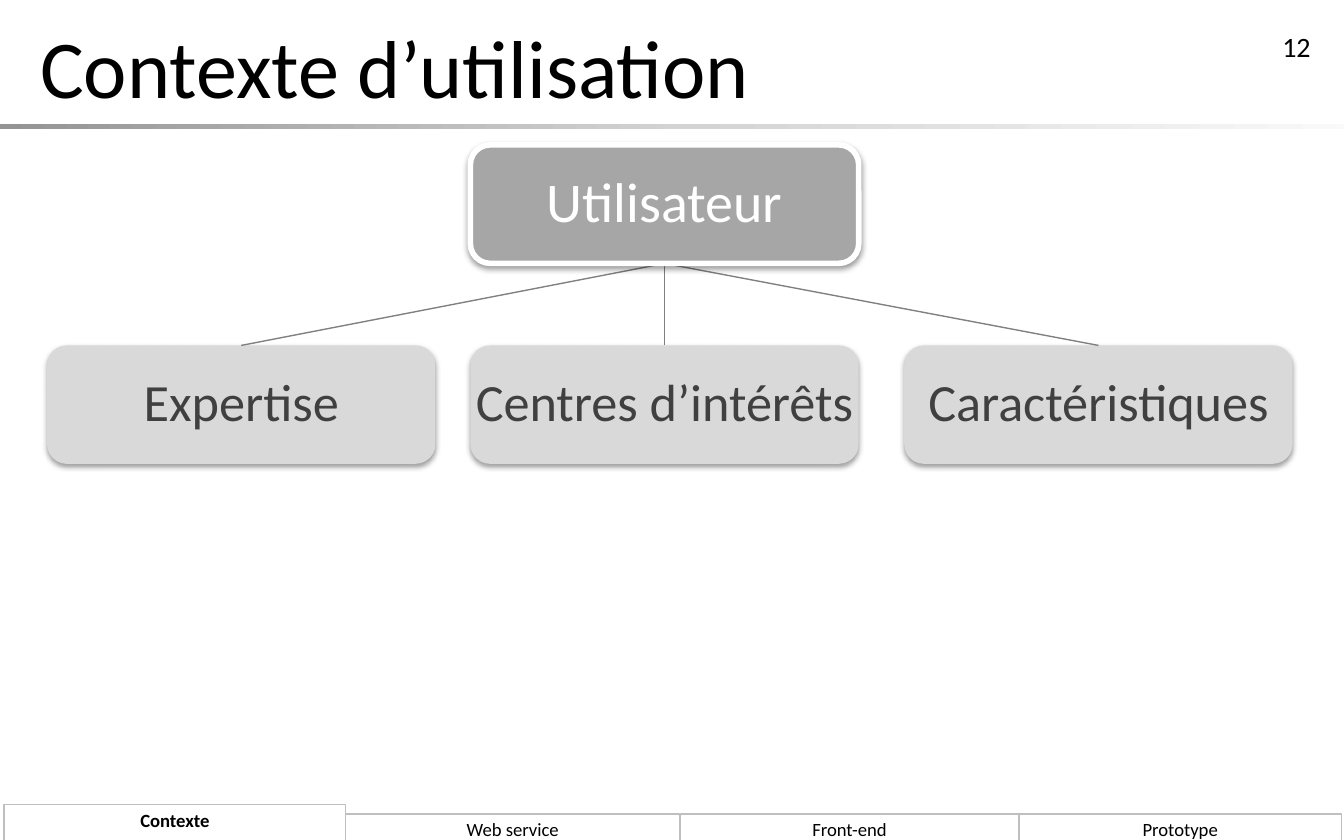
import lxml.etree
import pptx
import pptx.dml.color
import pptx.enum.shapes
import pptx.enum.text
import pptx.oxml.ns
import pptx.util

Cm = pptx.util.Cm
Pt = pptx.util.Pt
qn = pptx.oxml.ns.qn
SHAPES = pptx.enum.shapes.MSO_SHAPE
ALIGN = pptx.enum.text.PP_ALIGN
ANCHOR = pptx.enum.text.MSO_ANCHOR

TITLE = "Contexte d’utilisation"
PAGE_NUMBER = "12"
ROOT = "Utilisateur"
BRANCHES = [("Expertise", 0.89), ("Caractéristiques", 17.09), ("Centres d’intérêts", 8.89)]
TABS = ["Contexte", "Web service", "Front-end", "Prototype"]
TAB_EDGES = [0.08, 6.53, 12.85, 19.26, 25.35]
ACTIVE_TAB = "Contexte"
BAND_STOPS = [(0, "949494"), (50, "D3D3D3"), (100, "FAFAFA")]
COLORS = {
    "black": "000000",
    "white": "FFFFFF",
    "root": "A6A6A6",
    "branch": "D9D9D9",
    "branch_text": "404040",
    "link": "808080",
    "tab_line": "BFBFBF",
}
CARD_WIDTH, CARD_HEIGHT = 7.34, 2.24
ROOT_LEFT, ROOT_TOP, BRANCH_TOP = 8.89, 2.74, 6.53


def rgb(name):
    return pptx.dml.color.RGBColor.from_string(COLORS[name])


def write_text(shape, text, size, color="black", bold=False, align=ALIGN.LEFT,
               anchor=ANCHOR.TOP, margins=(0.25, 0.13, 0.25, 0.13), wrap=True, spacing=None):
    frame = shape.text_frame
    frame.word_wrap = wrap
    frame.vertical_anchor = anchor
    frame.margin_left, frame.margin_top, frame.margin_right, frame.margin_bottom = map(Cm, margins)
    paragraph = frame.paragraphs[0]
    paragraph.alignment = align
    paragraph.line_spacing = spacing
    run = paragraph.add_run()
    run.text = text
    run.font.name = "Calibri"
    run.font.size = Pt(size)
    run.font.bold = bold
    run.font.color.rgb = rgb(color)


def add_box(slide, kind, box, fill, line=None, line_width=0.75):
    shape = slide.shapes.add_shape(kind, *map(Cm, box))
    shape.shadow.inherit = False
    shape.fill.solid()
    shape.fill.fore_color.rgb = rgb(fill)
    if line:
        shape.line.color.rgb = rgb(line)
        shape.line.width = Pt(line_width)
    else:
        shape.line.fill.background()
    return shape


def add_color(parent, color, alpha=None):
    element = lxml.etree.SubElement(parent, qn("a:srgbClr"), val=color)
    if alpha is not None:
        lxml.etree.SubElement(element, qn("a:alpha"), val=str(alpha * 1000))


def add_card(slide, text, left, top, fill, size, color, line=None):
    card = add_box(slide, SHAPES.ROUNDED_RECTANGLE, (left, top, CARD_WIDTH, CARD_HEIGHT), fill, line, 3)
    effects = card._element.spPr.find(qn("a:effectLst"))
    shadow = lxml.etree.SubElement(effects, qn("a:outerShdw"), blurRad=str(Pt(3.1)),
                                   dist=str(Pt(1.6)), dir="5400000", rotWithShape="0")
    add_color(shadow, COLORS["black"], 38)
    write_text(card, text, size, color, align=ALIGN.CENTER, anchor=ANCHOR.MIDDLE,
               margins=(0.08,) * 4, wrap=False, spacing=0.9)
    return card


def add_link(slide, card):
    link = slide.shapes.add_connector(pptx.enum.shapes.MSO_CONNECTOR.STRAIGHT, 0, 0, 0, 0)
    link.begin_connect(card, 0)
    link.line.color.rgb = rgb("link")
    link.line.width = Pt(0.75)
    lxml.etree.SubElement(link._element.spPr, qn("a:effectLst"))
    return link


def add_header(slide):
    band = add_box(slide, SHAPES.RECTANGLE, (0, 2.34, 25.91, 0.1), "white")
    band.fill.gradient()
    band.fill.gradient_angle = 0
    stops = band._element.spPr.find(qn("a:gradFill")).find(qn("a:gsLst"))
    stops.clear()
    for position, color in BAND_STOPS:
        add_color(lxml.etree.SubElement(stops, qn("a:gs"), pos=str(position * 1000)), color)
    title = slide.shapes.add_textbox(Cm(0.51), Cm(0.13), Cm(23.6), Cm(2.21))
    write_text(title, TITLE, 44, anchor=ANCHOR.MIDDLE)
    number = slide.shapes.add_textbox(Cm(19.1), Cm(0.43), Cm(5.92), Cm(0.84))
    write_text(number, PAGE_NUMBER, 15, align=ALIGN.RIGHT)


def add_tabs(slide):
    for text, left, right in zip(TABS, TAB_EDGES, TAB_EDGES[1:]):
        active = text == ACTIVE_TAB
        top, height = (15.21, 1.07) if active else (15.39, 0.64)
        tab = add_box(slide, SHAPES.RECTANGLE, (left, top, right - left, height), "white", "tab_line")
        write_text(tab, text, 10, bold=active, align=ALIGN.CENTER, margins=(0.25, 0.08, 0.25, 0.13))


def add_tree(slide):
    branches = [add_card(slide, text, left, BRANCH_TOP, "branch", 28, "branch_text")
                for text, left in BRANCHES]
    links = [add_link(slide, branch) for branch in branches]
    root = add_card(slide, ROOT, ROOT_LEFT, ROOT_TOP, "root", 30, "white", "white")
    for link in links:
        link.end_connect(root, 2)


def main():
    presentation = pptx.Presentation()
    presentation.slide_width, presentation.slide_height = Cm(25.4), Cm(15.88)
    slide = presentation.slides.add_slide(presentation.slide_layouts[6])
    add_header(slide)
    add_tabs(slide)
    add_tree(slide)
    presentation.save("out.pptx")


if __name__ == "__main__":
    main()
